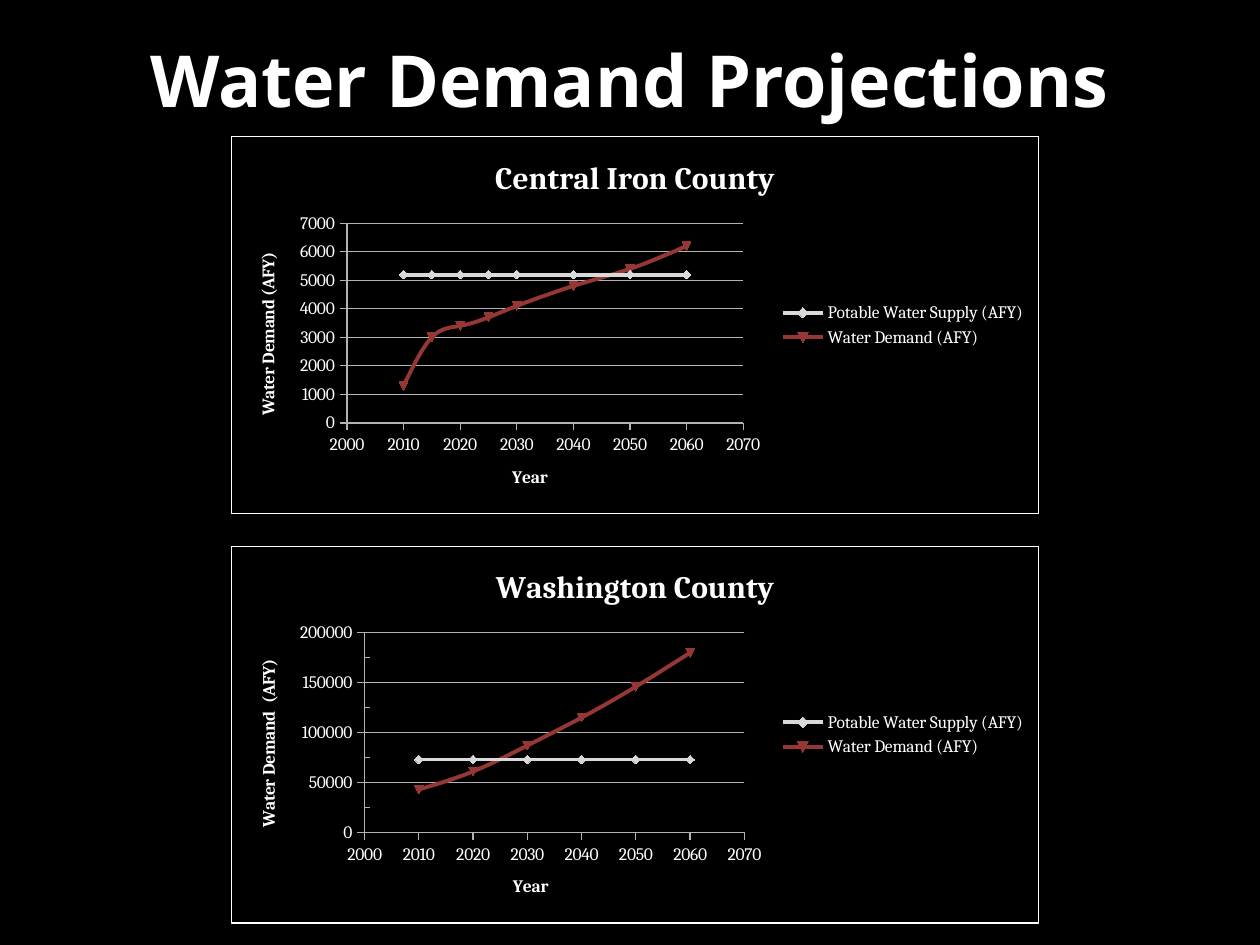
from lxml import etree
from pptx import Presentation
from pptx.chart.data import XyChartData
from pptx.dml.color import RGBColor
from pptx.enum.chart import XL_CHART_TYPE as ChartType, XL_LEGEND_POSITION as LegendPos
from pptx.enum.chart import XL_TICK_MARK as Tick
from pptx.enum.text import MSO_ANCHOR, PP_ALIGN
from pptx.oxml import parse_xml
from pptx.oxml.ns import nsdecls, qn
from pptx.util import Inches, Pt

BLACK = RGBColor(0x00, 0x00, 0x00)
WHITE = RGBColor(0xFF, 0xFF, 0xFF)
GRID_GRAY = RGBColor(0xB3, 0xB3, 0xB3)
SUPPLY_GRAY = RGBColor(0xD9, 0xD9, 0xD9)
DEMAND_RED = RGBColor(0x95, 0x37, 0x35)
CHART_WIDTH, CHART_HEIGHT = Inches(6.42), Inches(3)


def format_font(font, **values):
    font.color.rgb = WHITE
    for key, value in values.items():
        setattr(font, key, value)


def add_title(owner, text, size):
    """Title a chart or an axis."""
    owner.has_title = True
    title = owner.chart_title if hasattr(owner, "chart_title") else owner.axis_title
    title.text_frame.text = text
    run = title.text_frame.paragraphs[0].runs[0]
    format_font(run.font, name="Cambria", size=Pt(size), bold=True)


prs = Presentation()
prs.slide_width, prs.slide_height = Inches(10), Inches(7.5)
slide = prs.slides.add_slide(prs.slide_layouts[5])
slide.background.fill.solid()
slide.background.fill.fore_color.rgb = BLACK

# Slide title
heading = slide.shapes.title
heading.left, heading.top = Inches(0.5), Inches(0)
heading.width, heading.height = Inches(9), Inches(1.25)
heading.text_frame.text = "Water Demand Projections"
heading.text_frame.vertical_anchor = MSO_ANCHOR.MIDDLE
heading_line = heading.text_frame.paragraphs[0]
heading_line.alignment = PP_ALIGN.CENTER
format_font(heading_line.runs[0].font, name="Open Sans", size=Pt(41), bold=True)

# County data; the plot offset and width are in inches within the chart
counties = [
    dict(name="Washington County", top=4.33, demand_title="Water Demand  (AFY)",
         years=[2010, 2020, 2030, 2040, 2050, 2060], supply=73000,
         demand=[43000, 61000, 87000, 115000, 146000, 180000],
         maximum=200000, step=50000, minor=Tick.INSIDE,
         plot_left=1.06, plot_width=3.02),
    dict(name="Central Iron County", top=1.08, demand_title="Water Demand (AFY)",
         years=[2010, 2015, 2020, 2025, 2030, 2040, 2050, 2060], supply=5200,
         demand=[1300, 3000, 3400, 3700, 4100, 4800, 5400, 6200],
         maximum=7000, step=1000, minor=Tick.NONE,
         plot_left=0.92, plot_width=3.15),
]

for county in counties:
    data = XyChartData(number_format="General")
    supply = [county["supply"]] * len(county["years"])
    for label, values in (("Potable Water Supply (AFY)", supply),
                          ("Water Demand (AFY)", county["demand"])):
        line = data.add_series(label)
        for year, value in zip(county["years"], values):
            line.add_data_point(year, value)
    chart = slide.shapes.add_chart(
        ChartType.XY_SCATTER_SMOOTH, Inches(1.83), Inches(county["top"]),
        CHART_WIDTH, CHART_HEIGHT, data).chart
    format_font(chart.font, name="Cambria", size=Pt(10))
    add_title(chart, county["name"], 18)
    chart.has_legend = True
    chart.legend.position = LegendPos.RIGHT
    chart.legend.include_in_layout = False

    # Axes
    year_axis, demand_axis = chart.category_axis, chart.value_axis
    add_title(year_axis, "Year", 10)
    add_title(demand_axis, county["demand_title"], 10)
    year_scale = dict(minimum_scale=2000, maximum_scale=2070, major_unit=10,
                      has_major_gridlines=False, minor_tick_mark=Tick.NONE)
    demand_scale = dict(minimum_scale=0, maximum_scale=county["maximum"],
                        major_unit=county["step"], minor_unit=county["step"] / 2,
                        has_major_gridlines=True, minor_tick_mark=county["minor"])
    for axis, scale in ((year_axis, year_scale), (demand_axis, demand_scale)):
        for key, value in scale.items():
            setattr(axis, key, value)
        axis.major_tick_mark = Tick.OUTSIDE
        axis.format.line.color.rgb = GRID_GRAY
        axis.format.line.width = Pt(0.75)
    grid_line = demand_axis.major_gridlines.format.line
    grid_line.color.rgb = GRID_GRAY
    grid_line.width = Pt(0.75)

    # Series; the index picks the automatic marker symbol
    for index, (series, color) in enumerate(
            zip(chart.plots[0].series, (SUPPLY_GRAY, DEMAND_RED)), start=1):
        series.format.line.color.rgb = color
        series.format.line.width = Pt(2.25)
        series.marker.size = 5
        series.marker.format.fill.solid()
        series.marker.format.fill.fore_color.rgb = color
        series.marker.format.line.color.rgb = color
        for tag, value in (("c:idx", index), ("c:smooth", 1)):
            series._element.find(qn(tag)).set("val", str(value))

    # Plot position, as shares of the chart
    plot_area = chart._chartSpace.chart.plotArea
    for old_layout in plot_area.findall(qn("c:layout")):
        plot_area.remove(old_layout)
    layout = parse_xml(f"<c:layout {nsdecls('c')}><c:manualLayout/></c:layout>")
    settings = dict(layoutTarget="inner", xMode="edge", yMode="edge",
                    x=Inches(county["plot_left"]) / CHART_WIDTH,
                    y=Inches(0.69) / CHART_HEIGHT,
                    w=Inches(county["plot_width"]) / CHART_WIDTH,
                    h=Inches(1.59) / CHART_HEIGHT)
    for key, value in settings.items():
        etree.SubElement(layout[0], qn(f"c:{key}")).set("val", str(value))
    plot_area.insert(0, layout)

    # Black chart area with a white border
    border = parse_xml(
        f'<c:spPr {nsdecls("c", "a")}><a:solidFill><a:srgbClr val="{BLACK}"/></a:solidFill>'
        f'<a:ln w="{Pt(0.75)}"><a:solidFill><a:srgbClr val="{WHITE}"/></a:solidFill></a:ln>'
        "</c:spPr>")
    chart._chartSpace.chart.addnext(border)

prs.save("out.pptx")
